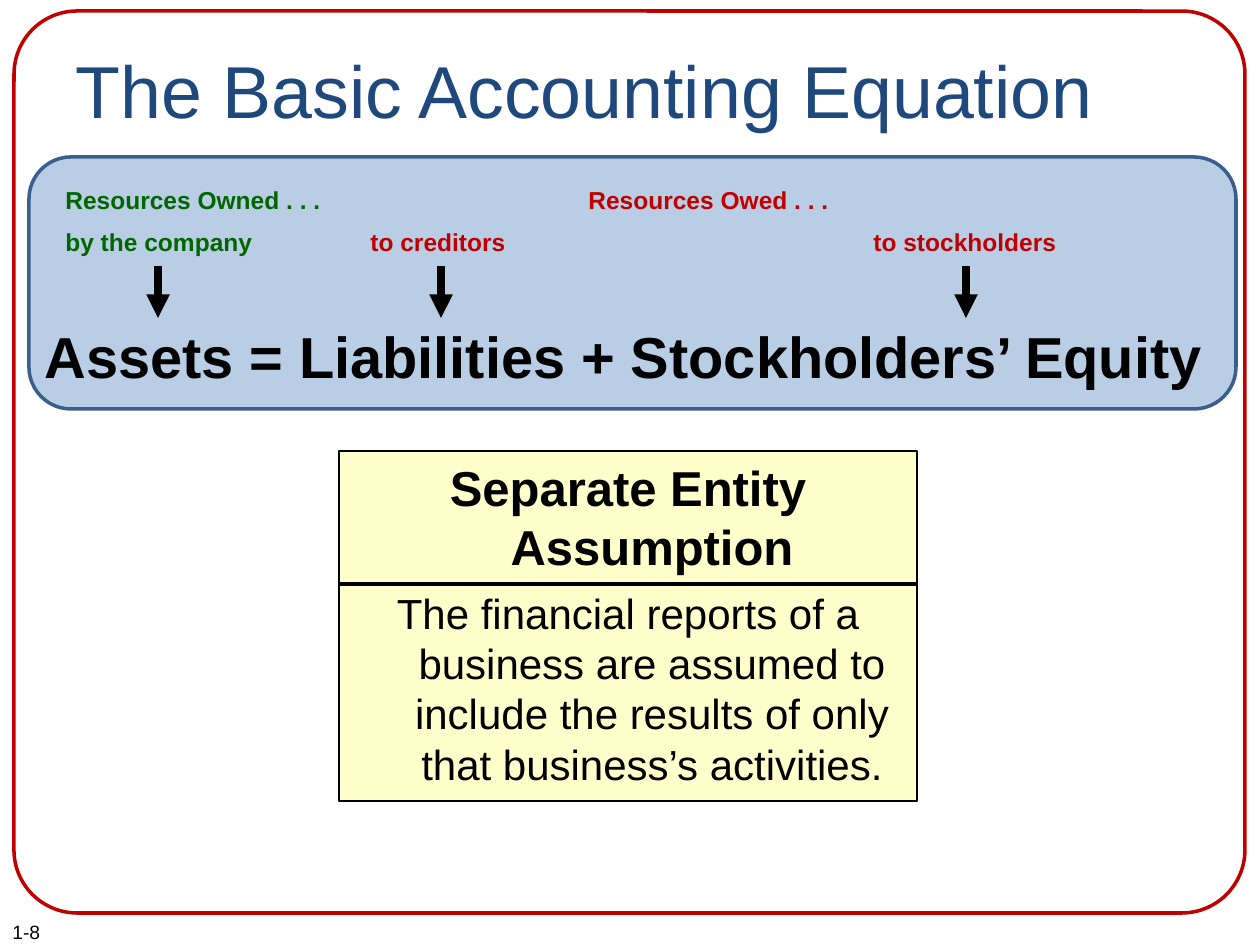
import pptx
import pptx.dml.color
import pptx.enum.shapes
import pptx.enum.text
import pptx.oxml.ns
import pptx.util
from lxml import etree

SCALE = 914400 / 126  # EMU per px
SHAPES = pptx.enum.shapes.MSO_SHAPE
ALIGN = pptx.enum.text.PP_ALIGN
qn = pptx.oxml.ns.qn
BLACK, RED, GREEN = "000000", "C00000", "006600"


def px(n):
    return round(n * SCALE)


def color(value):
    return pptx.dml.color.RGBColor.from_string(value)


def set_values(obj, values):
    for name, value in values.items():
        setattr(obj, name, value)


def add_paragraph(tf, text, size, hue=BLACK, bold=False, tabs=(), hanging=0, **layout):
    """Fill the first paragraph if it is empty, otherwise append one."""
    p = tf.paragraphs[0] if not tf.paragraphs[0].runs else tf.add_paragraph()
    set_values(p, {"alignment": ALIGN.LEFT, **layout})
    r = p.add_run()
    r.text = text
    set_values(r.font, {"name": "Arial", "size": pptx.util.Pt(size), "bold": bold})
    r.font.color.rgb = color(hue)
    pPr = p._p.get_or_add_pPr()
    if hanging:
        pPr.set("marL", str(px(hanging)))
        pPr.set("indent", str(-px(hanging)))
    if tabs:
        stops = etree.SubElement(pPr, qn("a:tabLst"))
        for stop in tabs:
            etree.SubElement(stops, qn("a:tab"), pos=str(px(stop)), algn="l")


def add_text(s, box):
    tf = s.shapes.add_textbox(*map(px, box)).text_frame
    tf.word_wrap = True
    return tf


def add_box(s, kind, box, line, width, fill=None, radius=None):
    sp = s.shapes.add_shape(kind, *map(px, box))
    sp.shadow.inherit = False
    if fill:
        sp.fill.solid()
        sp.fill.fore_color.rgb = color(fill)
    else:
        sp.fill.background()
    sp.line.color.rgb = color(line)
    sp.line.width = pptx.util.Pt(width)
    if radius is not None:
        sp.adjustments[0] = radius
    return sp


def add_line(s, x1, y1, x2, y2, width, arrow=False):
    line = s.shapes.add_connector(
        pptx.enum.shapes.MSO_CONNECTOR.STRAIGHT, *map(px, (x1, y1, x2, y2)))
    line.line.color.rgb = color(BLACK)
    line.line.width = pptx.util.Pt(width)
    if arrow:
        etree.SubElement(line.line._get_or_add_ln(), qn("a:tailEnd"), type="triangle")
    etree.SubElement(line._element.spPr, qn("a:effectLst"))


def add_title(s, text):
    sp = s.shapes.title
    set_values(sp, {"left": px(63), "top": px(38), "width": px(1134), "height": px(157)})
    set_values(sp.text_frame, {
        "vertical_anchor": pptx.enum.text.MSO_ANCHOR.TOP,
        "margin_top": px(7), "word_wrap": True})
    add_paragraph(sp.text_frame, text, 42, "1F497D")


def add_labels(s, box, lines, hue):
    """Two-line caption; each line is (text, tab stops)."""
    tf = add_text(s, box)
    for text, tabs in lines:
        add_paragraph(tf, text, 14, hue, True, tabs, space_before=pptx.util.Pt(7))


def add_assumption(s):
    sp = add_box(s, SHAPES.RECTANGLE, (339, 451, 578, 350), BLACK, 0.75, "FFFFCC")
    tf = sp.text_frame
    set_values(tf, {"word_wrap": True, "vertical_anchor": pptx.enum.text.MSO_ANCHOR.TOP})
    layout = {"hanging": 48, "alignment": ALIGN.CENTER}
    add_paragraph(tf, "Separate Entity Assumption", 28, bold=True, **layout)
    add_paragraph(tf, "The financial reports of a business are assumed to include "
                  "the results of only that business’s activities.", 24,
                  space_before=pptx.util.Pt(7), **layout)
    add_line(s, 339, 584, 917, 584, 2.25)


def main():
    prs = pptx.Presentation()
    set_values(prs, {"slide_width": px(1260), "slide_height": px(945)})
    s = prs.slides.add_slide(prs.slide_layouts[5])

    # Page number, frame and title
    add_paragraph(add_text(s, (0, 914, 179, 36)), "1-8", 11)
    add_box(s, SHAPES.ROUNDED_RECTANGLE, (14, 11, 1231, 902), RED, 2, radius=0.07)
    add_title(s, "The Basic Accounting Equation")

    # Equation panel with captions and arrows
    add_box(s, SHAPES.ROUNDED_RECTANGLE, (29, 157, 1207, 252), "3A5F8C", 2, "B9CDE5")
    add_labels(s, (53, 179, 388, 87),
               [("Resources Owned . . .", ()), ("by the company", ())], GREEN)
    add_labels(s, (284, 179, 966, 87),
               [("\tResources Owed . . .", (292,)),
                ("\tto creditors\tto stockholders", (74, 577))], RED)
    for x in (158, 441, 966):
        add_line(s, x, 266, x, 318, 4.5, arrow=True)
    add_paragraph(add_text(s, (32, 315, 1197, 83)),
                  "Assets = Liabilities + Stockholders’ Equity", 33, bold=True)

    # Separate entity assumption
    add_assumption(s)

    prs.save("out.pptx")


if __name__ == "__main__":
    main()
